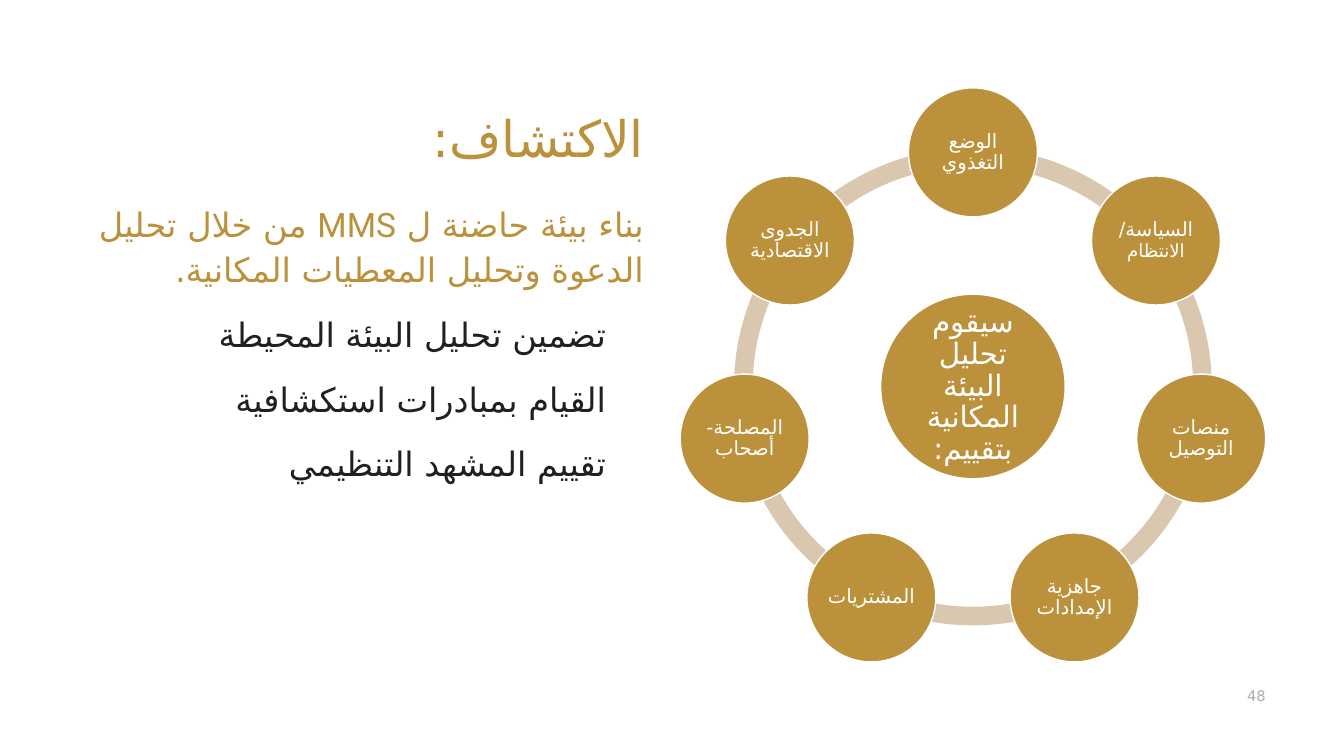
from dataclasses import dataclass
from math import cos, radians, sin

from lxml import etree
from pptx import Presentation
from pptx.dml.color import RGBColor
from pptx.enum.shapes import MSO_SHAPE as Preset
from pptx.enum.text import MSO_ANCHOR as Anchor, PP_ALIGN as Align
from pptx.oxml.ns import qn
from pptx.util import Cm, Pt

GOLD, SAND, INK, GREY, WHITE = "BB913C", "DAC7AF", "231F20", "AFABAB", "FFFFFF"
FONT = "Roboto"
ARABIC_FONT = "DejaVu Sans"  # Roboto has no Arabic letters

# Ring geometry, in centimetres and degrees
CENTRE_X, CENTRE_Y = 24.52, 9.74
RING_DIAMETER = 12.04
ORBIT = 5.9
HUB_DIAMETER, NODE_DIAMETER = 4.65, 3.25
TOP = 270
DEGREE = 0.6  # one degree as an adjustment value


@dataclass
class Run:
    text: str
    size: float


@dataclass
class Paragraph:
    runs: list[Run]
    color: str
    spacing: float = 1.0
    before: float = 0
    indent: float = 0


def rgb(value: str) -> RGBColor:
    return RGBColor.from_string(value)


def write(frame, paragraphs: list[Paragraph], *, align=Align.RIGHT,
          anchor=Anchor.TOP, inset: float = 0) -> None:
    """Fill a text frame with right-to-left paragraphs."""
    frame.word_wrap = True
    frame.vertical_anchor = anchor
    frame.margin_left = frame.margin_right = Cm(inset)
    frame.margin_top = frame.margin_bottom = Cm(inset)
    for index, item in enumerate(paragraphs):
        line = frame.add_paragraph() if index else frame.paragraphs[0]
        line.alignment = align
        line.line_spacing = item.spacing
        if item.before:
            line.space_before = Pt(item.before)
        properties = line._p.get_or_add_pPr()
        properties.set("rtl", "1")
        if item.indent:
            properties.set("marL", str(Cm(item.indent)))
            properties.set("indent", "0")
        for number, part in enumerate(item.runs):
            if number:
                line.add_line_break()
            run = line.add_run()
            run.text = part.text
            run.font.size = Pt(part.size)
            run.font.name = FONT
            run.font.color.rgb = rgb(item.color)
            run_properties = run._r.get_or_add_rPr()
            run_properties.set("lang", "ar-SA")
            script = etree.SubElement(run_properties, qn("a:cs"))
            script.set("typeface", ARABIC_FONT)


def add_text(left: float, top: float, width: float, height: float,
             paragraphs: list[Paragraph], anchor=Anchor.TOP) -> None:
    box = slide.shapes.add_textbox(Cm(left), Cm(top), Cm(width), Cm(height))
    write(box.text_frame, paragraphs, anchor=anchor)


def add_round(preset, x: float, y: float, diameter: float, fill: str):
    """Add a round shape around the centre x, y."""
    shape = slide.shapes.add_shape(
        preset, Cm(x - diameter / 2), Cm(y - diameter / 2), Cm(diameter), Cm(diameter))
    shape.shadow.inherit = False
    shape.fill.solid()
    shape.fill.fore_color.rgb = rgb(fill)
    return shape


def add_arc(start: float, end: float) -> None:
    arc = add_round(Preset.BLOCK_ARC, CENTRE_X, CENTRE_Y, RING_DIAMETER, SAND)
    arc.line.fill.background()
    arc.adjustments[0] = start % 360 * DEGREE
    arc.adjustments[1] = end % 360 * DEGREE
    arc.adjustments[2] = 0.039


def add_disc(x: float, y: float, diameter: float, runs: list[Run], inset: float) -> None:
    disc = add_round(Preset.OVAL, x, y, diameter, GOLD)
    disc.line.color.rgb = rgb(WHITE)
    disc.line.width = Pt(1)
    write(disc.text_frame, [Paragraph(runs, WHITE, 0.9)],
          align=Align.CENTER, anchor=Anchor.MIDDLE, inset=inset)


presentation = Presentation()
presentation.slide_width, presentation.slide_height = Cm(33.87), Cm(19.05)
slide = presentation.slides.add_slide(presentation.slide_layouts[6])

# Heading
add_text(1.96, 0.81, 14.27, 3.43,
         [Paragraph([Run("الاكتشاف:", 36)], GOLD, 0.9)], Anchor.BOTTOM)

# Aim and its steps
aim = "بناء بيئة حاضنة ل MMS من خلال تحليل الدعوة وتحليل المعطيات المكانية."
steps = [
    "تضمين تحليل البيئة المحيطة",
    "القيام بمبادرات استكشافية",
    "تقييم المشهد التنظيمي",
]
add_text(1.96, 5.05, 14.27, 10.95,
         [Paragraph([Run(aim, 24)], GOLD, 1.1)]
         + [Paragraph([Run(step, 24)], INK, 1.4, 6, 0.95) for step in steps])

# Slide number
add_text(31.04, 17.02, 0.86, 1.02,
         [Paragraph([Run("48", 10.5)], GREY)], Anchor.MIDDLE)

# Ring of assessed topics, clockwise from the top
topics = [
    [Run("الوضع التغذوي", 14)],
    [Run("السياسة/", 14), Run("الانتظام", 13)],
    [Run("منصات التوصيل", 14)],
    [Run("جاهزية الإمدادات", 14)],
    [Run("المشتريات", 14)],
    [Run("المصلحة-", 14), Run("أصحاب", 14)],
    [Run("الجدوى الاقتصادية", 14)],
]
step_angle = 360 / len(topics)
angles = [TOP + index * step_angle for index in range(len(topics))]
for angle in angles:
    add_arc(angle, angle + step_angle)

add_disc(CENTRE_X, CENTRE_Y, HUB_DIAMETER,
         [Run("سيقوم تحليل البيئة المكانية بتقييم:", 21)], 0.08)
for angle, topic in zip(angles, topics):
    add_disc(CENTRE_X + ORBIT * cos(radians(angle)),
             CENTRE_Y + ORBIT * sin(radians(angle)),
             NODE_DIAMETER, topic, 0.05)

presentation.save("out.pptx")
